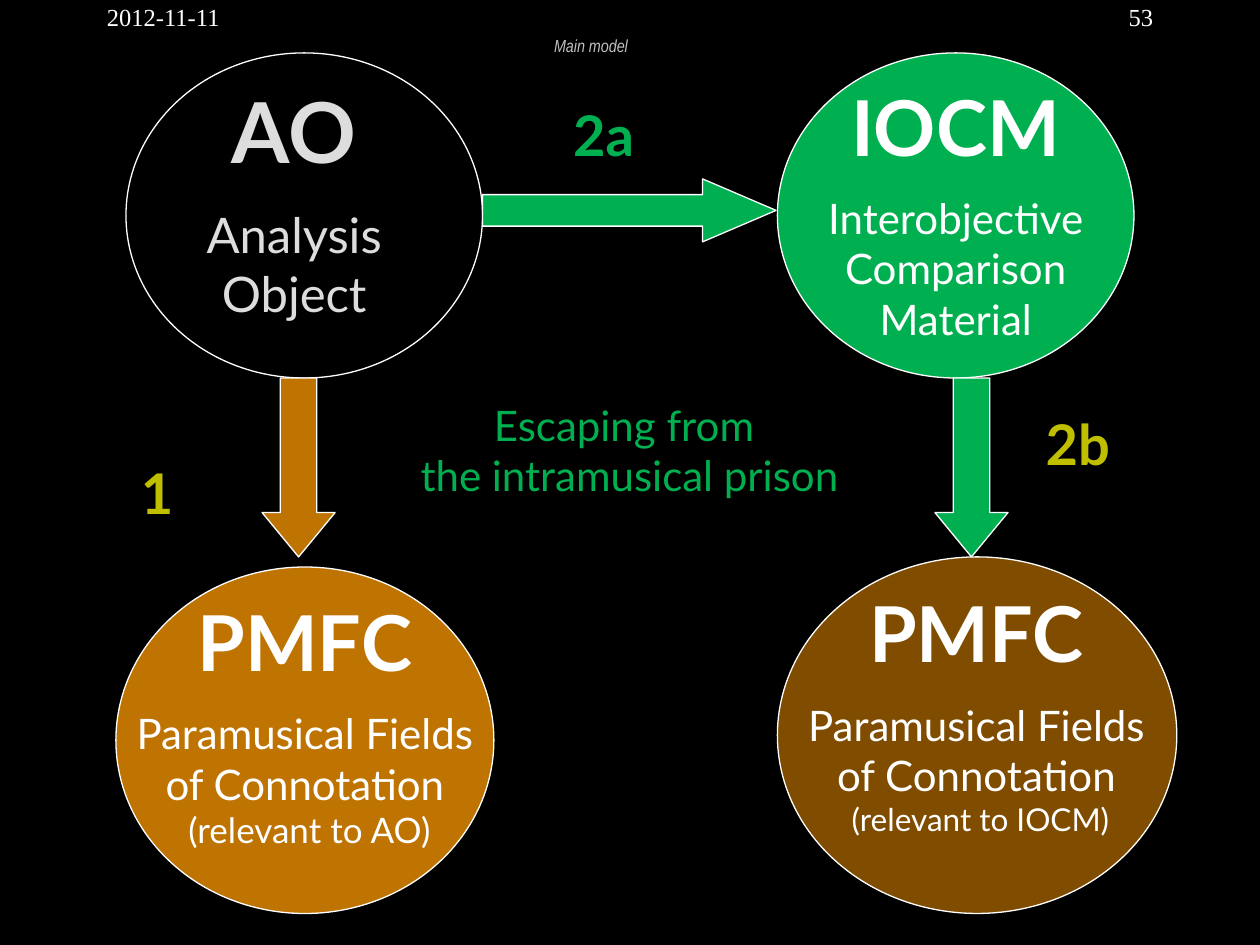
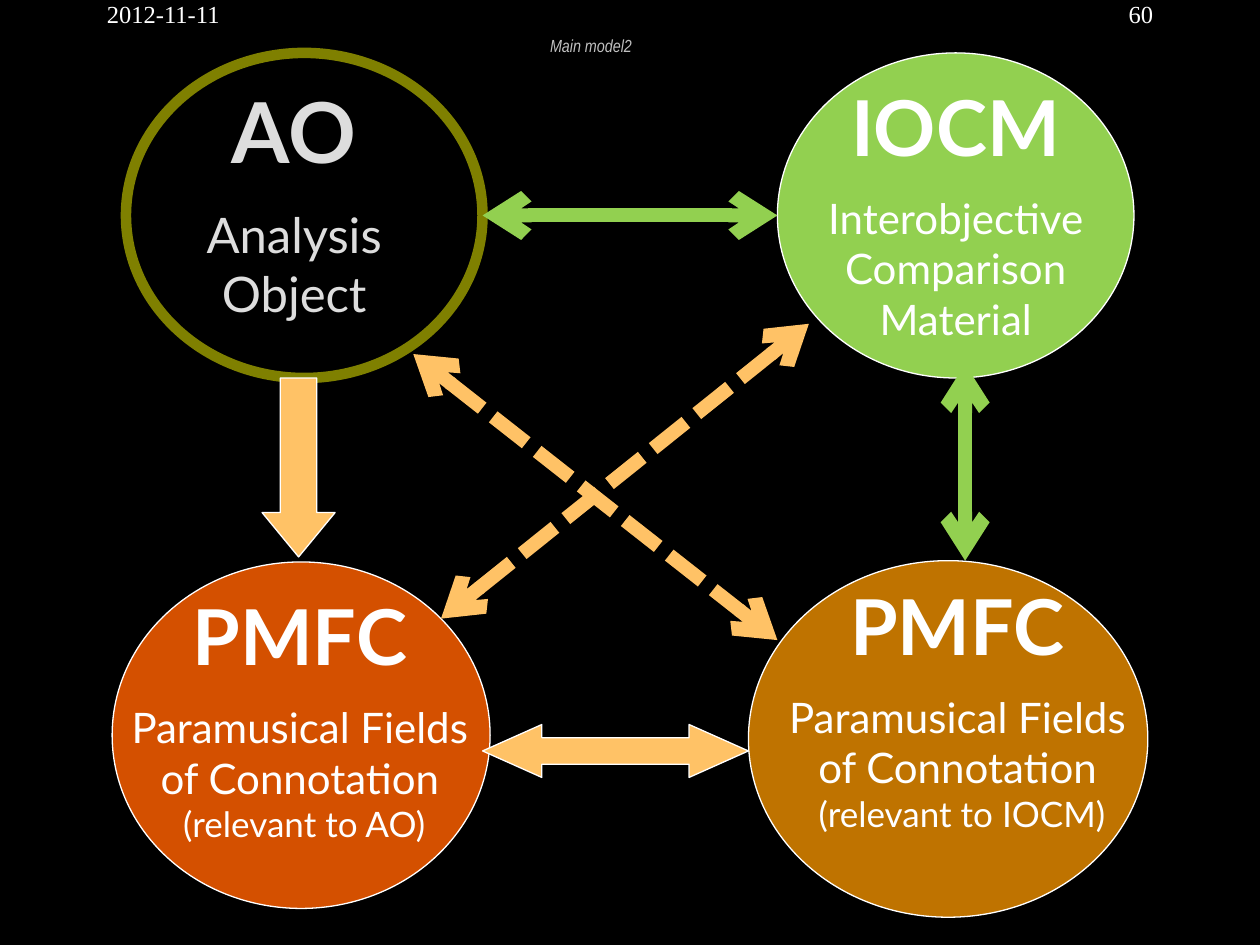
import pptx
import pptx.util
import pptx.dml.color
import pptx.enum.dml
import pptx.enum.shapes
import pptx.enum.text
import pptx.oxml
import pptx.oxml.ns

WHITE, BLACK, GREY = "FFFFFF", "000000", "DDDDDD"
GREEN, LIME, OCHRE, PEACH, GOLD = "00B050", "92D050", "BF7300", "FFC266", "BFBF00"

FIELDS = ["Paramusical Fields", "of Connotation"]
AO = ("AO", 48, GREY, [("Analysis", 28), ("Object", 28)])
IOCM = ("IOCM", 44, WHITE, [(t, 24) for t in ("Interobjective", "Comparison", "Material")])


def field(name, size):
    return ("PMFC", 44, WHITE, [(t, 24) for t in FIELDS] + [(f" (relevant to {name})", size)])


AO_DISC = (1, 0.42, 2.83, 2.58)
AO_TEXT = (1.25, 0.58, 2.17, 2.07)
IOCM_DISC = (6.17, 0.42, 2.83, 2.58)
IOCM_TEXT = (6.42, 0.58, 2.33, 2.26)
AO_DOWN = (2.08, 3, 0.58, 1.42)

MODELS = [
    dict(
        title="Main model", page="53", top=-0.03,
        nodes=[
            (field("IOCM", 18), (6.17, 4.42, 3.17, 2.83), (6, 4.6, 3.5, 2.15), "804C00", WHITE, 0.75),
            (field("AO", 20), (0.92, 4.5, 3, 2.75), (0.67, 4.67, 3.5, 2.26), OCHRE, WHITE, 0.75),
            (AO, AO_DISC, AO_TEXT, BLACK, WHITE, 0.75),
            (IOCM, IOCM_DISC, IOCM_TEXT, GREEN, WHITE, 0.75),
        ],
        blocks=[
            ("DOWN_ARROW", AO_DOWN, 0.607, OCHRE),
            ("RIGHT_ARROW", (3.83, 1.42, 2.33, 0.5), 1.167, GREEN),
            ("DOWN_ARROW", (7.42, 3, 0.58, 1.42), 0.607, GREEN),
        ],
        lines=[],
        labels=[
            ("1", (1.02, 3.59, 0.62, 0.64), GOLD),
            ("2a", (4.45, 0.75, 0.86, 0.64), GREEN),
            ("2b", (8.2, 3.2, 1.13, 0.64), GOLD),
        ],
        slogan=["Escaping from ", "the intramusical prison"],
    ),
    dict(
        title="Main model2", page="60", top=-0.06,
        nodes=[
            (AO, AO_DISC, AO_TEXT, BLACK, "7F8000", 6),
            (IOCM, IOCM_DISC, IOCM_TEXT, LIME, WHITE, 0.75),
            (field("IOCM", 20), (5.94, 4.45, 3.17, 2.83), (5.85, 4.54, 3.5, 2.26), OCHRE, WHITE, 0.75),
            (field("AO", 20), (0.89, 4.46, 3, 2.75), (0.63, 4.62, 3.5, 2.26), "D45000", WHITE, 0.75),
        ],
        blocks=[
            ("DOWN_ARROW", AO_DOWN, 0.607, PEACH),
            ("LEFT_RIGHT_ARROW", (3.83, 5.75, 2.11, 0.42), 1.12, PEACH),
        ],
        lines=[
            ((3.83, 1.71), (6.17, 1.71), LIME, False),
            ((7.66, 4.45), (7.66, 2.89), LIME, False),
            ((3.28, 2.81), (6.17, 5.08), PEACH, True),
            ((6.42, 2.57), (3.5, 4.91), PEACH, True),
        ],
        labels=[], slogan=[],
    ),
]


def inch(nums):
    return [pptx.util.Inches(n) for n in nums]


def tint(code):
    return pptx.dml.color.RGBColor.from_string(code)


def put(slide, box, paras, font="Lato", color=WHITE, size=24, bold=False,
        slant=False, align="LEFT", gap=False):
    frame = slide.shapes.add_textbox(*inch(box)).text_frame
    frame.word_wrap = True
    for num, lines in enumerate(paras):
        para = frame.add_paragraph() if num else frame.paragraphs[0]
        para.alignment = getattr(pptx.enum.text.PP_ALIGN, align)
        if gap:
            space = pptx.oxml.parse_xml(
                f'<a:spcBef {pptx.oxml.ns.nsdecls("a")}><a:spcPct val="50000"/></a:spcBef>')
            para._p.get_or_add_pPr().append(space)
        for row, line in enumerate(lines):
            if row:
                para.add_line_break()
            text, points, heavy = line if isinstance(line, tuple) else (line, size, bold)
            run = para.add_run()
            run.text = text
            run.font.name = font
            run.font.size = pptx.util.Pt(points)
            run.font.bold = heavy
            run.font.italic = slant
            run.font.color.rgb = tint(color)


def draw(slide, kind, box, fill, edge=WHITE, width=0.75):
    shape = slide.shapes.add_shape(getattr(pptx.enum.shapes.MSO_SHAPE, kind), *inch(box))
    shape.shadow.inherit = False
    shape.fill.solid()
    shape.fill.fore_color.rgb = tint(fill)
    shape.line.color.rgb = tint(edge)
    shape.line.width = pptx.util.Pt(width)
    return shape


def link(slide, start, end, color, dashed):
    wire = slide.shapes.add_connector(
        pptx.enum.shapes.MSO_CONNECTOR.STRAIGHT, *inch(start + end))
    wire.line.color.rgb = tint(color)
    wire.line.width = pptx.util.Pt(8)
    if dashed:
        wire.line.dash_style = pptx.enum.dml.MSO_LINE.SQUARE_DOT
    names = pptx.oxml.ns.nsdecls("a")
    for tip in ("headEnd", "tailEnd"):
        wire.line._get_or_add_ln().append(pptx.oxml.parse_xml(f'<a:{tip} {names} type="arrow"/>'))
    wire._element.spPr.append(pptx.oxml.parse_xml(f"<a:effectLst {names}/>"))


def node(slide, words, disc, box, fill, edge, width):
    head, size, color, rest = words
    draw(slide, "OVAL", disc, fill, edge, width)
    body = [(text, points, False) for text, points in rest]
    put(slide, box, [[(head, size, True)], body], color=color, align="CENTER", gap=True)


def build(deck, model):
    slide = deck.slides.add_slide(deck.slide_layouts[6])
    slide.background.fill.solid()
    slide.background.fill.fore_color.rgb = tint(BLACK)
    for item in model["nodes"]:
        node(slide, *item)
    for kind, box, head, fill in model["blocks"]:
        arrow = draw(slide, kind, box, fill)
        arrow.adjustments[0], arrow.adjustments[1] = 0.5, head
    for item in model["lines"]:
        link(slide, *item)
    for text, box, color in model["labels"]:
        put(slide, box, [[text]], color=color, size=32, bold=True)
    if model["slogan"]:
        put(slide, (2.95, 3.12, 4.09, 0.91), [[t] for t in model["slogan"]],
            color=GREEN, align="CENTER")
    put(slide, (3.75, 0.23, 1.88, 0.43), [[model["title"]]], font="Arial Narrow",
        color="C0C0C0", size=10, slant=True, align="CENTER")
    for text, left, align in (("2012-11-11", 0.75, "LEFT"), (model["page"], 7.17, "RIGHT")):
        put(slide, (left, model["top"], 2.08, 0.5), [[text]],
            font="Times New Roman", size=14, align=align)


def main():
    deck = pptx.Presentation()
    deck.slide_width, deck.slide_height = inch((10, 7.5))
    for model in MODELS:
        build(deck, model)
    deck.save("out.pptx")


if __name__ == "__main__":
    main()
